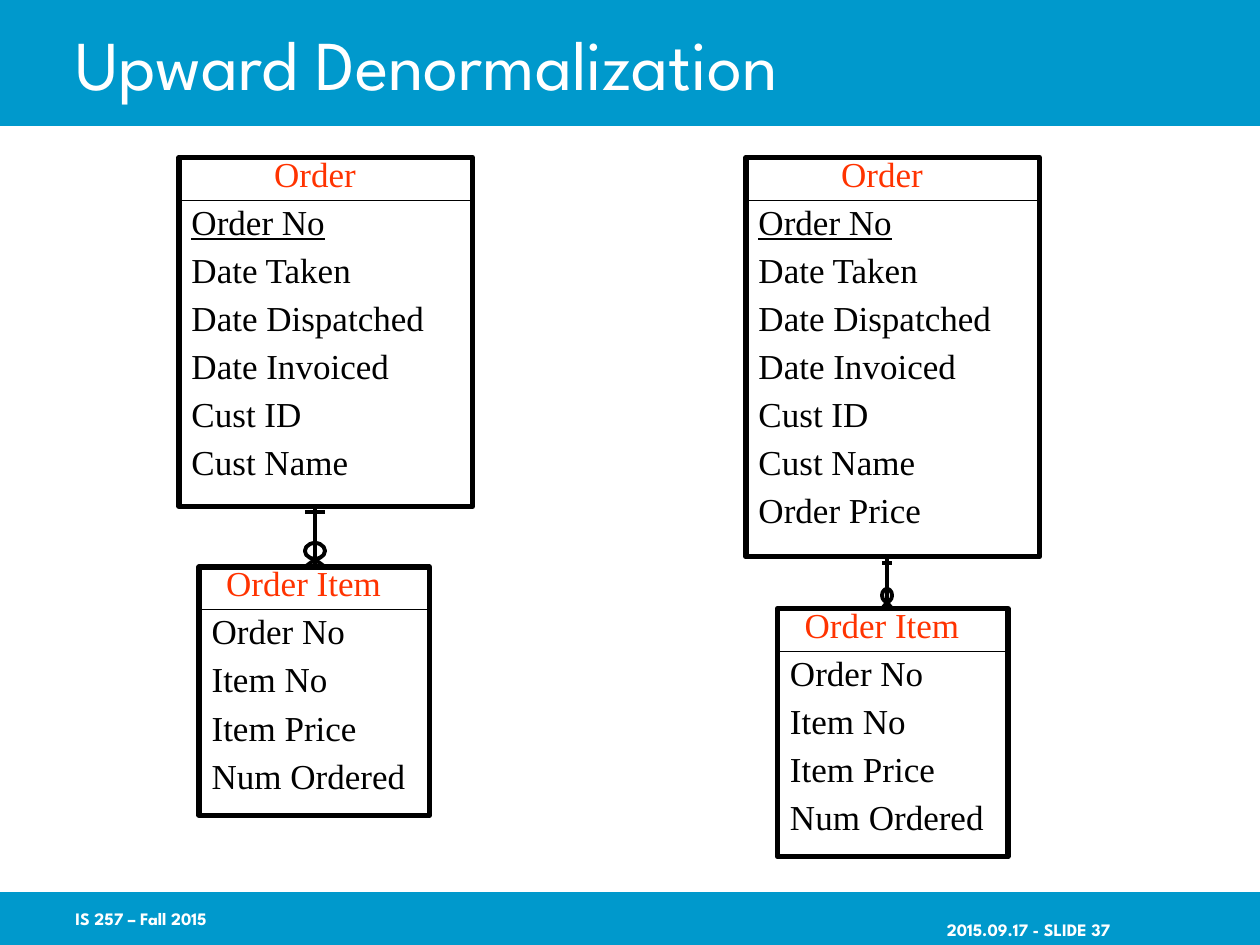
from lxml import etree
from pptx import Presentation
from pptx import util as u
from pptx.dml.color import RGBColor
from pptx.enum import shapes, text
from pptx.oxml.ns import qn

BLUE, WHITE, BLACK, RED = "0099CC", "FFFFFF", "000000", "FF3300"
SANS, SERIF = "League Spartan", "Times New Roman"
WIDE, HIGH = 10, 7.5

ORDER = ["Order", "Order No", "Date Taken", "Date Dispatched",
         "Date Invoiced", "Cust ID", "Cust Name"]
ITEM = ["Order Item", "Order No", "Item No", "Item Price", "Num Ordered"]

# Each table: rows, key row, left, top, width, height
# Each link: centre, top, bottom, half width of its marks
MODELS = [
    {"tables": [(ORDER, 1, 1.42, 1.25, 2.33, 2.77),
                (ITEM, None, 1.58, 4.5, 1.83, 1.97)],
     "link": (2.5, 4, 4.5, 0.08)},
    {"tables": [(ORDER + ["Order Price"], 1, 5.92, 1.25, 2.33, 3.17),
                (ITEM, None, 6.17, 4.83, 1.83, 1.97)],
     "link": (7.04, 4.42, 4.83, 0.04)},
]

# Left, top, width, height, text and format
LABELS = [
    (0.5, 0, 8.5, 1, "Upward Denormalization", {"size": 40}),
    (0.5, 7.08, 2.08, 0.42, "IS 257 – Fall 2015", {"size": 10, "bold": True}),
    (6.73, 7.17, 2.08, 0.42, "2015.09.17 - SLIDE 37",
     {"size": 10, "bold": True, "align": text.PP_ALIGN.RIGHT}),
]

deck = Presentation()
deck.slide_width, deck.slide_height = u.Inches(WIDE), u.Inches(HIGH)
slide = deck.slides.add_slide(deck.slide_layouts[6])
parts = slide.shapes


def tint(code):
    return RGBColor.from_string(code)


def write(para, words, size=20, font=SANS, color=WHITE, bold=False,
          under=False, align=text.PP_ALIGN.LEFT):
    run = para.add_run()
    run.text = words
    para.alignment = align
    face = run.font
    face.size, face.name, face.bold = u.Pt(size), font, bold
    face.underline = under
    face.color.rgb = tint(color)


def inset(frame, left, right):
    frame.word_wrap = True
    frame.margin_left, frame.margin_right = u.Inches(left), u.Inches(right)
    frame.margin_top = frame.margin_bottom = u.Inches(0.05)


def shape(kind, left, top, width, height, fill=None, line=None):
    item = parts.add_shape(kind, *map(u.Inches, (left, top, width, height)))
    item.shadow.inherit = False
    if fill:
        item.fill.solid()
        item.fill.fore_color.rgb = tint(fill)
    else:
        item.fill.background()
    if line:
        item.line.color.rgb = tint(BLACK)
        item.line.width = u.Pt(line)
    else:
        item.line.fill.background()
    return item


def rule(x1, y1, x2, y2, width=2.25):
    line = parts.add_connector(shapes.MSO_CONNECTOR.STRAIGHT,
                               *map(u.Inches, (x1, y1, x2, y2)))
    line.line.color.rgb = tint(BLACK)
    line.line.width = u.Pt(width)
    etree.SubElement(line._element.spPr, qn("a:effectLst"))


def table(rows, key, left, top, width, height):
    box = shape(shapes.MSO_SHAPE.RECTANGLE, left, top, width, height, line=3)
    frame = box.text_frame
    # Uneven insets move the heading left of centre
    inset(frame, 0, 0.17)
    frame.vertical_anchor = text.MSO_ANCHOR.TOP
    for n, row in enumerate(rows):
        para = frame.add_paragraph() if n else frame.paragraphs[0]
        para.line_spacing = 0.7
        if n:
            para.space_before = u.Pt(10.7)
            para._p.get_or_add_pPr().set("marL", str(u.Inches(0.1)))
            write(para, row, font=SERIF, color=BLACK, under=n == key)
        else:
            write(para, row, font=SERIF, color=RED,
                  align=text.PP_ALIGN.CENTER)
    rule(left, top + 0.34, left + width, top + 0.34, 0.75)


def link(mid, top, end, half):
    tall = end - top
    bar, foot = top + 0.12 * tall, end - 0.12 * tall
    rule(mid, top, mid, end)
    for side in (-half, half):
        rule(mid, foot, mid + side, end)
    rule(mid - half, bar, mid + half, bar)
    shape(shapes.MSO_SHAPE.OVAL, mid - half, top + 0.62 * tall,
          2 * half, 0.25 * tall, line=2.25)


# Header and footer bands
for top, height in ((0, 1), (7.08, 0.42)):
    shape(shapes.MSO_SHAPE.RECTANGLE, 0, top, WIDE, height, fill=BLUE)

# Title and footer text
for left, top, width, height, words, style in LABELS:
    box = parts.add_textbox(*map(u.Inches, (left, top, width, height)))
    inset(box.text_frame, 0.1, 0)
    box.text_frame.vertical_anchor = text.MSO_ANCHOR.MIDDLE
    write(box.text_frame.paragraphs[0], words, **style)

# Data models
for model in MODELS:
    for entry in model["tables"]:
        table(*entry)
    link(*model["link"])

deck.save("out.pptx")
